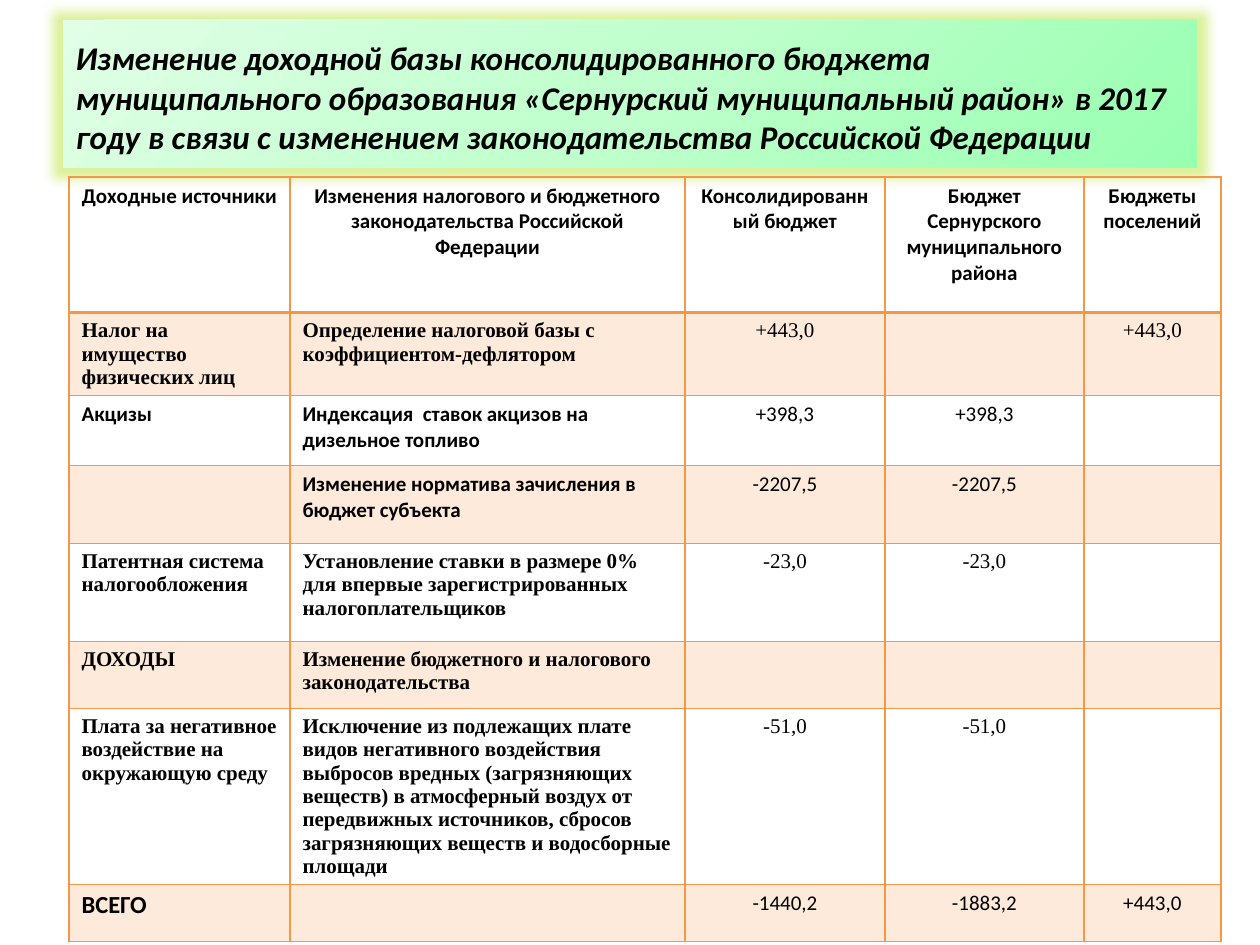
from lxml.etree import SubElement
from pptx import Presentation
from pptx.dml.color import RGBColor
from pptx.enum.text import MSO_ANCHOR, MSO_AUTO_SIZE, PP_ALIGN
from pptx.oxml import parse_xml
from pptx.oxml.ns import nsdecls, qn
from pptx.util import Emu, Pt

PX_PER_INCH = 126
SANS, SERIF = "Calibri", "Times New Roman"
BLACK, ORANGE, GLOW = "000000", "F79646", "C6E85A"
GRADIENT = [(0, "98FFB0"), (50, "C0FFCD"), (100, "E0FFE6")]

TITLE = (
    "Изменение доходной базы консолидированного бюджета муниципального образования "
    "«Сернурский муниципальный район» в 2017 году в связи с изменением "
    "законодательства Российской Федерации"
)
COLUMN_WIDTHS = [221, 395, 200, 199, 137]
HEADER = [
    "Доходные источники",
    "Изменения налогового и бюджетного законодательства Российской Федерации",
    "Консолидированный бюджет",
    "Бюджет Сернурского муниципального района",
    "Бюджеты поселений",
]
ROWS = [
    (136, SANS, HEADER),
    (70, SERIF, ["Налог на имущество физических лиц",
                 "Определение налоговой базы с коэффициентом-дефлятором",
                 "+443,0", "", "+443,0"]),
    (70, SANS, ["Акцизы", "Индексация  ставок акцизов на дизельное топливо",
                "+398,3", "+398,3", ""]),
    (78, SANS, ["", "Изменение норматива зачисления в бюджет субъекта",
                "-2207,5", "-2207,5", ""]),
    (98, SERIF, ["Патентная система налогообложения",
                 "Установление ставки в размере 0% для впервые зарегистрированных "
                 "налогоплательщиков", "-23,0", "-23,0", ""]),
    (67, SERIF, ["ДОХОДЫ", "Изменение бюджетного и налогового законодательства",
                 "", "", ""]),
    (152, SERIF, ["Плата за негативное воздействие на окружающую среду",
                  "Исключение из подлежащих плате видов негативного воздействия "
                  "выбросов вредных (загрязняющих веществ) в атмосферный воздух от "
                  "передвижных источников, сбросов загрязняющих веществ и "
                  "водосборные площади", "-51,0", "-51,0", ""]),
    (57, SANS, ["ВСЕГО", "", "-1440,2", "-1883,2", "+443,0"]),
]


def px(length):
    return Emu(round(length * 914400 / PX_PER_INCH))


def color(value):
    return RGBColor.from_string(value)


def format_text(paragraph, font_name, size, bold, align, italic=False):
    paragraph.alignment = align
    for run in paragraph.runs:
        font = run.font
        font.name, font.size = font_name, Pt(size)
        font.bold, font.italic = bold, italic
        font.color.rgb = color(BLACK)


def add_title(slide, left, top, width, height):
    title = slide.shapes.title
    title.left, title.top = px(left), px(top)
    title.width, title.height = px(width), px(height)
    stops = "".join(
        f'<a:gs pos="{position * 1000}"><a:srgbClr val="{value}"/></a:gs>'
        for position, value in GRADIENT
    )
    properties = title.element.spPr
    properties.append(parse_xml(
        f'<a:gradFill {nsdecls("a")} rotWithShape="1"><a:gsLst>{stops}</a:gsLst>'
        '<a:path path="circle"><a:fillToRect l="100000" t="100000"/></a:path>'
        '</a:gradFill>'
    ))
    properties.append(parse_xml(
        f'<a:effectLst {nsdecls("a")}><a:glow rad="{Pt(11)}">'
        f'<a:srgbClr val="{GLOW}"><a:alpha val="60000"/></a:srgbClr>'
        '</a:glow></a:effectLst>'
    ))
    frame = title.text_frame
    frame.text = TITLE
    frame.word_wrap = True
    frame.auto_size = MSO_AUTO_SIZE.NONE
    frame.vertical_anchor = MSO_ANCHOR.MIDDLE
    frame.margin_top = px(12)
    format_text(frame.paragraphs[0], SANS, 18.9, True, PP_ALIGN.LEFT, italic=True)


def add_border(cell, side, width):
    line = SubElement(cell._tc.get_or_add_tcPr(), qn(f"a:ln{side}"), w=str(Pt(width)))
    fill = SubElement(line, qn("a:solidFill"))
    SubElement(fill, qn("a:srgbClr"), val=ORANGE)


def format_cell(cell, row, column, font_name):
    for side in "LRTB":
        header_edge = (row, side) in [(0, "B"), (1, "T")]
        add_border(cell, side, 2 if header_edge else 1)
    if row % 2:
        cell.fill.solid()
        cell.fill.fore_color.rgb = color(ORANGE)
        shade = cell._tc.tcPr.find(qn("a:solidFill")).find(qn("a:srgbClr"))
        SubElement(shade, qn("a:alpha"), val="20000")
    else:
        cell.fill.background()
    is_label = column < 2
    is_total = row == len(ROWS) - 1 and is_label
    format_text(
        cell.text_frame.paragraphs[0],
        font_name,
        14 if is_total else 12,
        row == 0 or is_label,
        PP_ALIGN.LEFT if row and is_label else PP_ALIGN.CENTER,
    )


def add_budget_table(slide, left, top):
    width = sum(COLUMN_WIDTHS)
    height = sum(row_height for row_height, _, _ in ROWS)
    table = slide.shapes.add_table(
        len(ROWS), len(COLUMN_WIDTHS), px(left), px(top), px(width), px(height)
    ).table
    table.horz_banding = False
    for column, column_width in zip(table.columns, COLUMN_WIDTHS):
        column.width = px(column_width)
    for row, (row_height, font_name, texts) in enumerate(ROWS):
        table.rows[row].height = px(row_height)
        for column, text in enumerate(texts):
            cell = table.cell(row, column)
            cell.text = text
            format_cell(cell, row, column, font_name)


def main():
    presentation = Presentation()
    presentation.slide_width, presentation.slide_height = px(1260), px(945)
    slide = presentation.slides.add_slide(presentation.slide_layouts[5])
    add_title(slide, 63, 20, 1134, 148)
    add_budget_table(slide, 69, 177)
    presentation.save("out.pptx")


if __name__ == "__main__":
    main()
